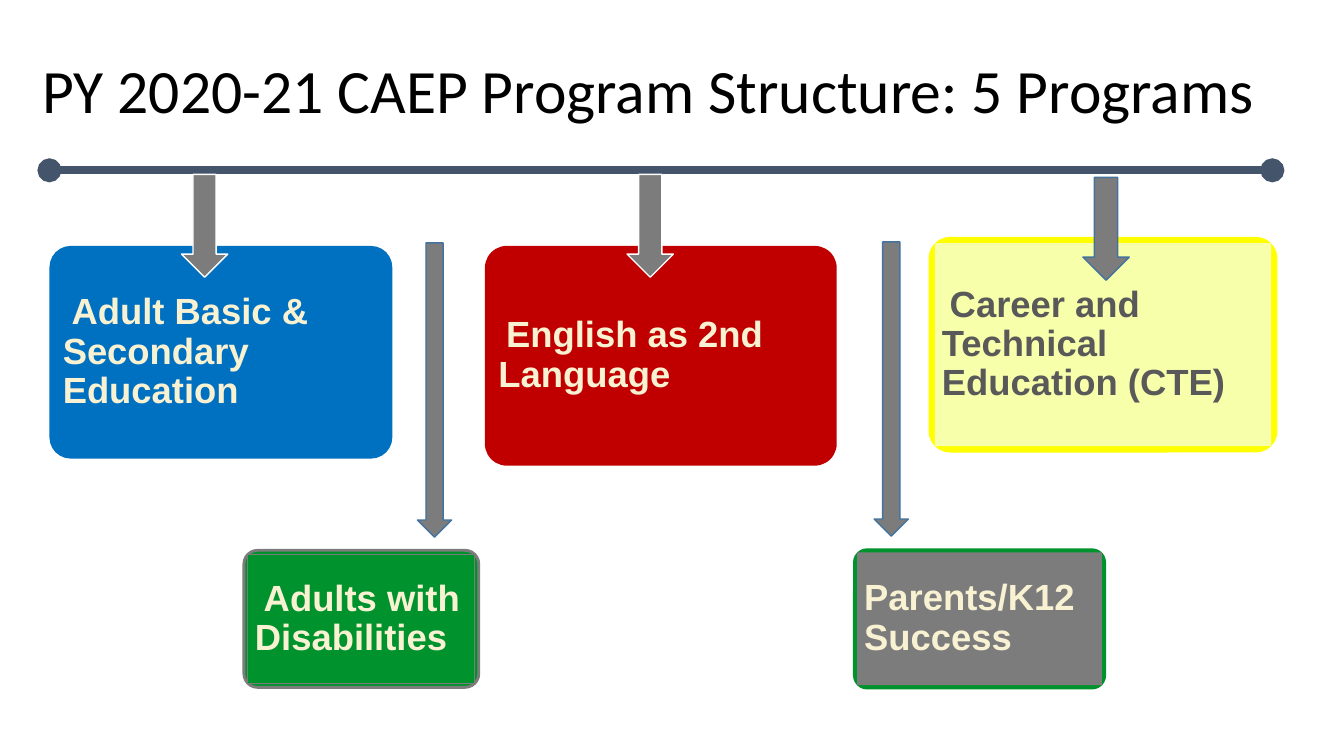
from lxml import etree
from pptx import Presentation
from pptx import util as u
from pptx.dml.color import RGBColor
from pptx.enum import shapes, text
from pptx.oxml.ns import qn

WIDTH, HEIGHT = u.Inches(13.33), u.Inches(7.5)
CREAM, GREY, GREEN, STEEL, WHITE = "F8F2D3", "7C7C7C", "00922D", "43739E", "FFFFFF"
CORNER = 0.1
CORNER_INSET = CORNER * (1 - 0.5 ** 0.5)  # where a corner arc crosses its diagonal

# Left, top, width, height in percent of the slide; frame, panel, edge, ink; (text, size) spans
CARDS = [
    ((3.68, 32.53, 25.51, 28.13), "0070C0", "0070C0", None, CREAM,
     [(" Adult Basic & Secondary Education", 26)]),
    ((18.15, 72.8, 17.48, 18.13), GREEN, GREEN, GREY, CREAM,
     [(" Adults with Disabilities", 26)]),
    ((36.08, 32.53, 26.18, 29.07), "C00000", "C00000", None, CREAM,
     [(" ", 20), ("English as 2nd Language", 26)]),
    ((69.09, 31.33, 25.96, 28.53), "FFFF00", "F7FFAB", None, "595959",
     [(" ", 20), ("Career and Technical Education (CTE)", 26)]),
    ((63.47, 72.53, 18.83, 18.67), GREEN, GREY, None, CREAM,
     [("Parents/K12 Success", 26)]),
]

SHORT, LONG = (3.45, 13.6), (2.55, 38.93)
ARROWS = [
    (65.04, 32, LONG, STEEL),
    (31.06, 32.13, LONG, STEEL),
    (13.5, 23.07, SHORT, WHITE),
    (46.66, 23.07, SHORT, WHITE),
    (80.57, 23.47, SHORT, STEEL),
]


def color(value):
    return RGBColor.from_string(value)


def across(percent):
    return round(WIDTH * percent / 100)


def down(percent):
    return round(HEIGHT * percent / 100)


def to_lengths(left, top, width, height):
    return across(left), down(top), across(width), down(height)


def add_block(slide, kind, area, fill, edge=None, weight=1):
    block = slide.shapes.add_shape(kind, *area)
    block.shadow.inherit = False
    block.fill.solid()
    block.fill.fore_color.rgb = color(fill)
    if edge:
        block.line.color.rgb = color(edge)
        block.line.width = u.Pt(weight)
    else:
        block.line.fill.background()
    return block


def write(shape, spans, font, ink, bold=False, before=0):
    frame = shape.text_frame
    frame.word_wrap = True
    frame.vertical_anchor = text.MSO_ANCHOR.MIDDLE
    para = frame.paragraphs[0]
    para.alignment = text.PP_ALIGN.LEFT
    para.line_spacing = 0.9
    para.space_before = u.Pt(before)
    for words, size in spans:
        span = para.add_run()
        span.text = words
        span.font.name = font
        span.font.size = u.Pt(size)
        span.font.bold = bold
        span.font.color.rgb = color(ink)
    return frame


def add_title(slide, words):
    box = slide.shapes.add_textbox(*to_lengths(2.4, 4.67, 94.75, 15.47))
    write(box, [(words, 44)], "Calibri", "000000")


def add_card(slide, area, frame_fill, panel_fill, edge, ink, spans):
    """Rounded frame with a text panel fitted between its corners."""
    left, top, width, height = to_lengths(*area)
    frame = add_block(slide, shapes.MSO_SHAPE.ROUNDED_RECTANGLE,
                      (left, top, width, height), frame_fill, edge, 2)
    frame.adjustments[0] = CORNER
    inset = round(height * CORNER_INSET)
    inner = (left + inset, top + inset, width - 2 * inset, height - 2 * inset)
    panel = add_block(slide, shapes.MSO_SHAPE.RECTANGLE, inner, panel_fill, edge, 0.75)
    body = write(panel, spans, "Arial", ink, bold=True, before=6)
    body.margin_left = body.margin_right = u.Inches(0.07)
    body.margin_top = body.margin_bottom = u.Inches(0.07)


def add_timeline(slide, start, end, level):
    """Horizontal line with a round dot at each end."""
    line = slide.shapes.add_connector(shapes.MSO_CONNECTOR.STRAIGHT, across(start),
                                      down(level), across(end), down(level))
    line.line.color.rgb = color("44546A")
    line.line.width = u.Pt(5.75)
    stroke = line.line._get_or_add_ln()
    for tip in ("a:headEnd", "a:tailEnd"):
        etree.SubElement(stroke, qn(tip), type="oval")
    etree.SubElement(line._element.spPr, qn("a:effectLst"))


def main():
    deck = Presentation()
    deck.slide_width, deck.slide_height = WIDTH, HEIGHT
    slide = deck.slides.add_slide(deck.slide_layouts[6])
    add_title(slide, "PY 2020-21 CAEP Program Structure: 5 Programs")
    for card in CARDS:
        add_card(slide, *card)
    add_timeline(slide, 3.68, 94.67, 22.53)
    for left, top, size, edge in ARROWS:
        add_block(slide, shapes.MSO_SHAPE.DOWN_ARROW,
                  to_lengths(left, top, *size), GREY, edge)
    deck.save("out.pptx")


if __name__ == "__main__":
    main()
